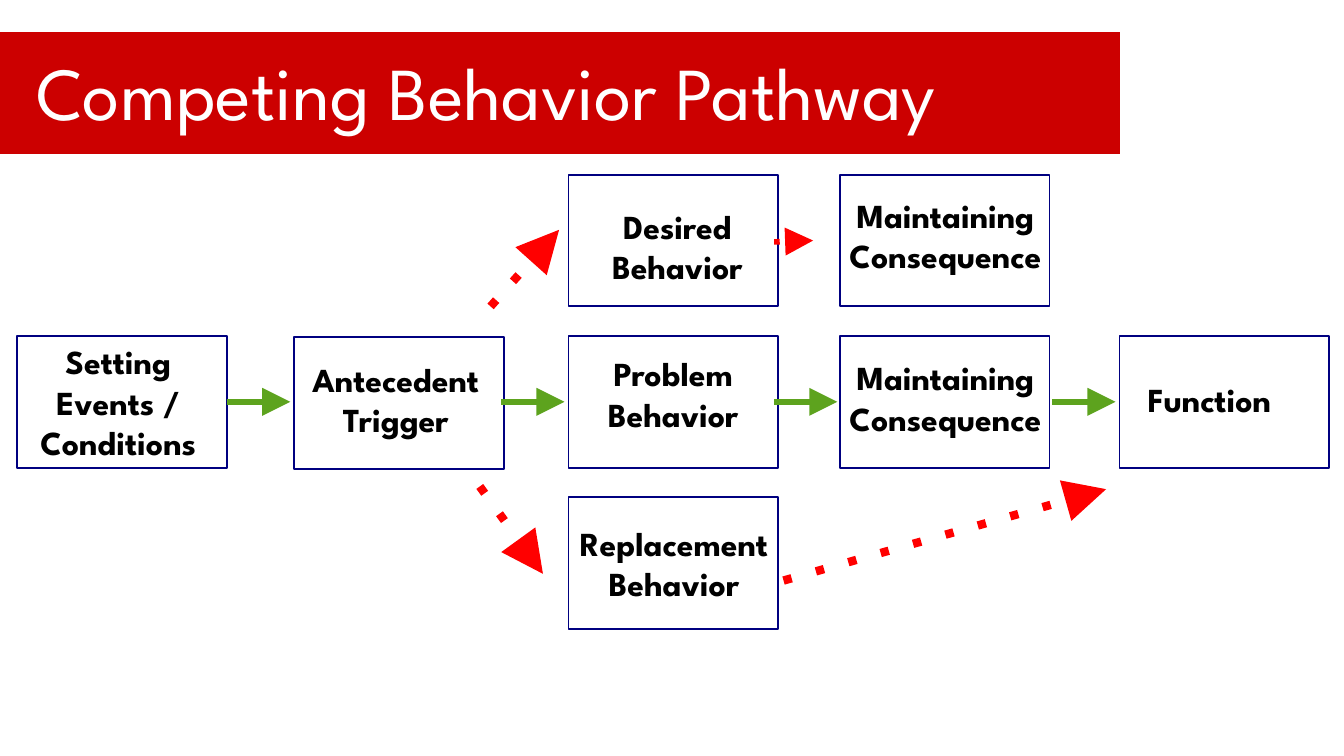
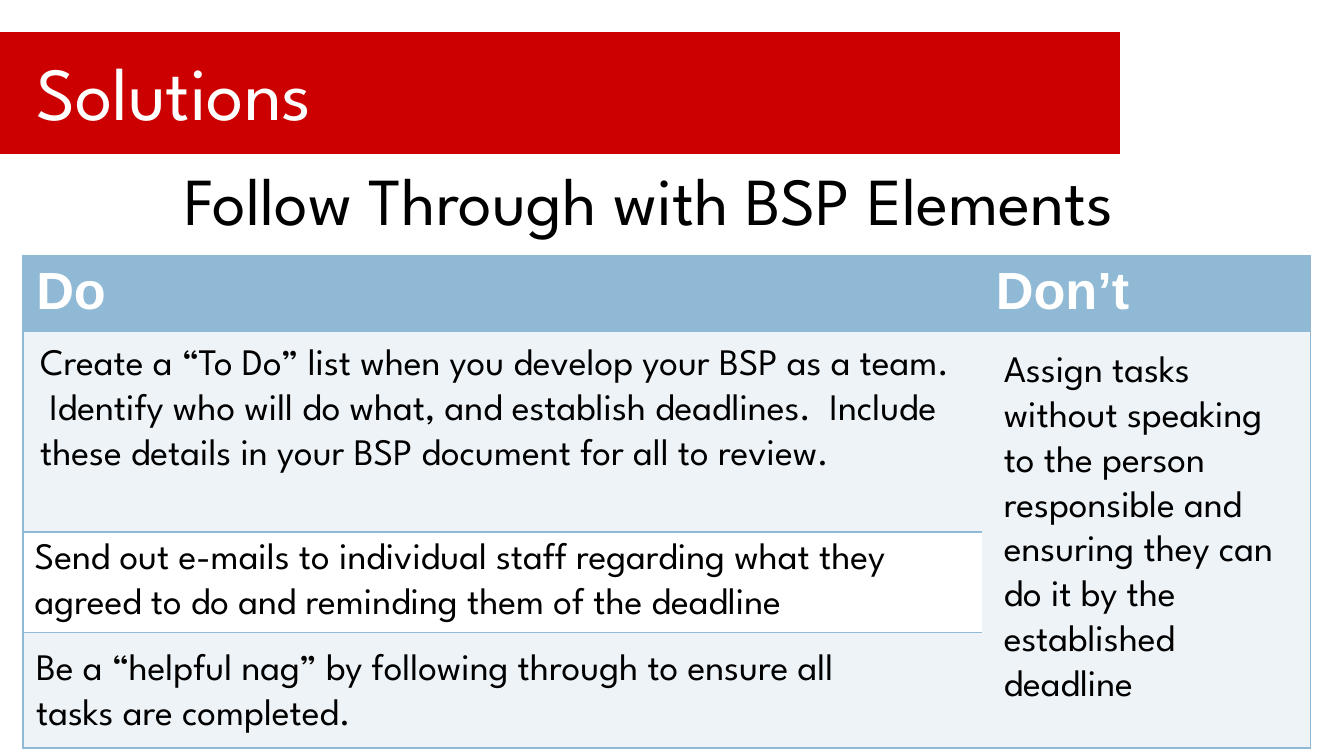
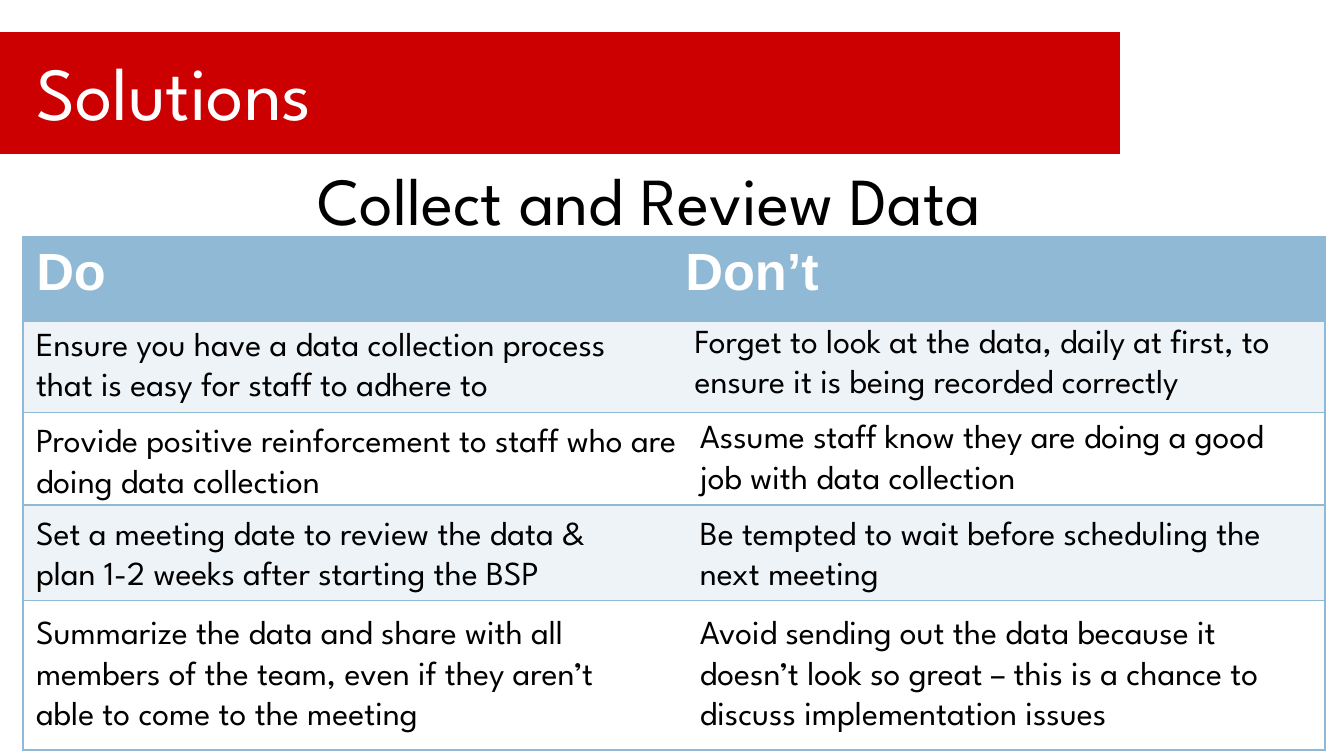
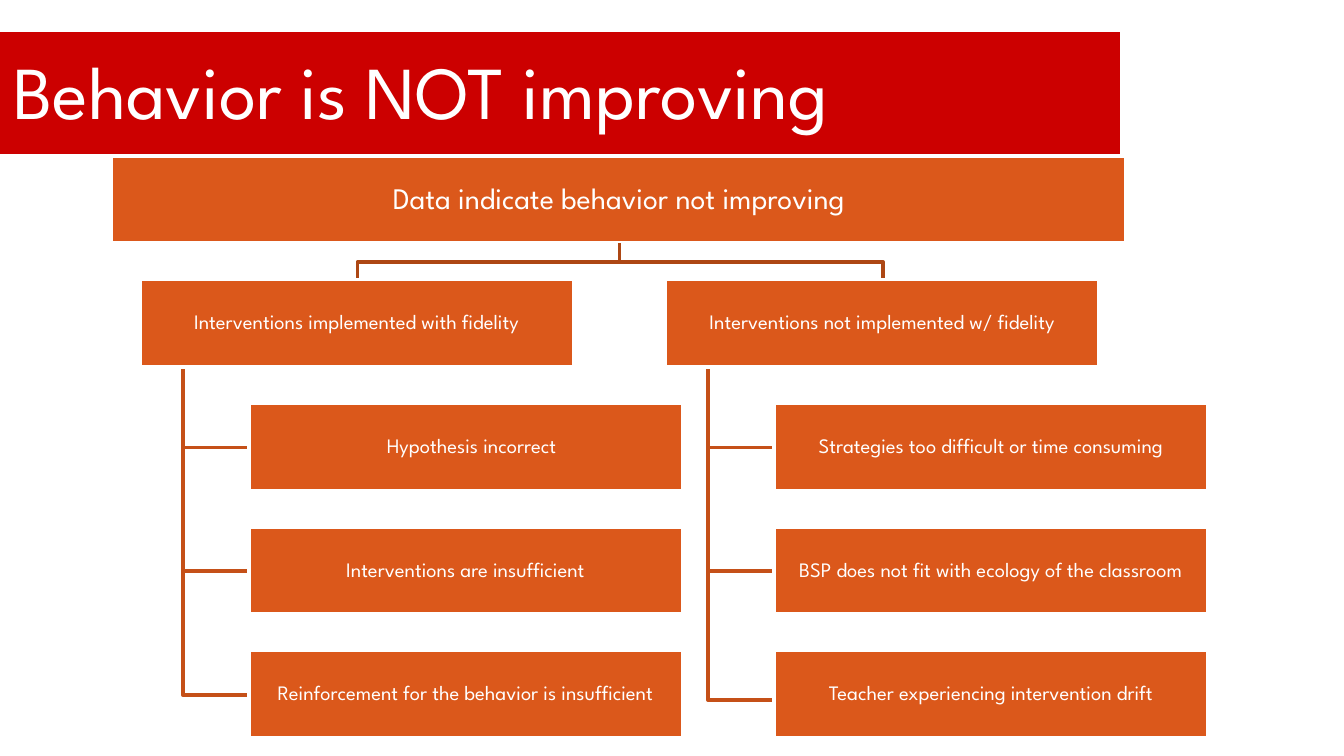
from lxml import etree
from pptx import Presentation
from pptx import util as u
from pptx.dml.color import RGBColor
from pptx.enum import shapes, text
from pptx.oxml.ns import qn

PX = 9144
FONT = "League Spartan"
WHITE, BLACK, RED = "FFFFFF", "000000", "CC0000"
NAVY, GREEN, BRIGHT_RED = "000080", "5DA31E", "FF0000"
BLUE, PALE = "8FB9D4", "EEF3F7"
ORANGE, ROOT_LINE, BRANCH_LINE = "DB581B", "AD4714", "C55018"
CENTER, LEFT = text.PP_ALIGN.CENTER, text.PP_ALIGN.LEFT
TOP, MIDDLE = text.MSO_ANCHOR.TOP, text.MSO_ANCHOR.MIDDLE


def px(*values):
    return [u.Emu(v * PX) for v in values]


def rgb(value):
    return RGBColor.from_string(value)


def write(tf, words, size=18, color=BLACK, bold=False, font=FONT, align=LEFT,
          anchor=TOP, ins=(10, 5, 10, 5), spacing=None):
    tf.word_wrap = True
    tf.vertical_anchor = anchor
    tf.margin_left, tf.margin_top, tf.margin_right, tf.margin_bottom = px(*ins)
    for i, line in enumerate(words.split("\n")):
        p = tf.add_paragraph() if i else tf.paragraphs[0]
        p.alignment = align
        p.line_spacing = spacing
        r = p.add_run()
        r.text = line
        r.font.size = u.Pt(size)
        r.font.name = font
        r.font.bold = bold
        r.font.color.rgb = rgb(color)


def add_text(s, box, words, **fmt):
    write(s.shapes.add_textbox(*px(*box)).text_frame, words, **fmt)


def add_rect(s, box, line, width, fill=None):
    sp = s.shapes.add_shape(shapes.MSO_SHAPE.RECTANGLE, *px(*box))
    sp.shadow.inherit = False
    if fill:
        sp.fill.solid()
        sp.fill.fore_color.rgb = rgb(fill)
    else:
        sp.fill.background()
    sp.line.color.rgb = rgb(line)
    sp.line.width = u.Pt(width)
    return sp


def add_arrow(s, ends, color, width, dotted=False, start=None):
    cx = s.shapes.add_connector(shapes.MSO_CONNECTOR.STRAIGHT, *px(*ends))
    if start is not None:
        cx.begin_connect(start, 3)
    cx.line.color.rgb = rgb(color)
    cx.line.width = u.Pt(width)
    spPr = cx.element.spPr
    ln = spPr.find(qn("a:ln"))
    if dotted:
        etree.SubElement(ln, qn("a:prstDash"), val="dot")
    etree.SubElement(ln, qn("a:tailEnd"), type="triangle", w="lg", len="lg")
    etree.SubElement(spPr, qn("a:effectLst"))


def add_elbow(s, points, color):
    fb = s.shapes.build_freeform(*points[0], scale=PX)
    fb.add_line_segments(points[1:], close=False)
    sp = fb.convert_to_shape()
    sp.shadow.inherit = False
    sp.fill.background()
    sp.line.color.rgb = rgb(color)
    sp.line.width = u.Pt(2.08)


def add_org_box(s, box, words, size=11, ins=(1, 1, 1, 1)):
    sp = add_rect(s, box, WHITE, 2.08, ORANGE)
    write(sp.text_frame, words, size=size, color=WHITE, align=CENTER,
          anchor=MIDDLE, ins=ins, spacing=0.9)


def set_borders(cell, sides):
    tcPr = cell._tc.get_or_add_tcPr()
    for side in "LRTB":
        ln = etree.SubElement(tcPr, qn("a:ln" + side), w=str(u.Pt(1)))
        if side in sides:
            fill = etree.SubElement(ln, qn("a:solidFill"))
            etree.SubElement(fill, qn("a:srgbClr"), val=BLUE)
        else:
            etree.SubElement(ln, qn("a:noFill"))


def add_do_dont_table(s, top, widths, heights, merge_dont=False):
    box = px(17, top, 328, 328)
    frame = s.shapes.add_table(len(heights), 2, *box)
    table = frame.table
    table.first_row = table.horz_banding = False
    for col, width in zip(table.columns, px(*widths)):
        col.width = width
    for row, height in zip(table.rows, px(*heights)):
        row.height = height
    frame.width, frame.height = box[2:]
    if merge_dont:
        table.cell(1, 1).merge(table.cell(len(heights) - 1, 1))
    for i in range(len(heights)):
        for j, sides in enumerate(("LTB", "RTB")):
            cell = table.cell(i, j)
            if cell.is_spanned:
                continue
            set_borders(cell, sides)
            cell.fill.solid()
            cell.fill.fore_color.rgb = rgb((PALE if i % 2 else WHITE) if i else BLUE)
    for j, heading in enumerate(("Do", "Don’t")):
        write(table.cell(0, j).text_frame, heading, size=28, color=WHITE,
              bold=True, font="Arial")


def new_slide(prs, title, box):
    s = prs.slides.add_slide(prs.slide_layouts[6])
    add_rect(s, (-8, 23, 842, 92), WHITE, 0.75, RED)
    add_text(s, box, title, size=40, color=WHITE, anchor=MIDDLE)
    return s


def solutions_slide(prs, subtitle):
    s = new_slide(prs, "Solutions", (17, 27, 947, 81))
    add_text(s, (0, 108, 950, 423), subtitle, size=36, align=CENTER,
             ins=(26, 10, 10, 10))
    return s


def pathway(prs):
    s = new_slide(prs, "Competing Behavior Pathway", (17, 27, 817, 81))
    steps = [
        ((13, 250), (13, 249, 150, 100), "Setting Events /\nConditions", CENTER),
        ((219, 251), (211, 262, 167, 77), "Antecedent Trigger", CENTER),
        ((423, 130), (425, 148, 158, 77), "Desired Behavior", CENTER),
        ((423, 250), (426, 258, 150, 77), "Problem Behavior", CENTER),
        ((423, 370), (414, 384, 175, 77), "Replacement Behavior", CENTER),
        ((625, 130), (612, 140, 183, 77), "Maintaining\nConsequence", CENTER),
        ((625, 250), (612, 261, 183, 77), "Maintaining\nConsequence", CENTER),
        ((833, 250), (844, 277, 133, 44), "Function", LEFT),
    ]
    rects = []
    for corner, label_box, label, align in steps:
        rects.append(add_rect(s, (*corner, 156, 98), NAVY, 1))
        add_text(s, label_box, label, bold=True, align=align)
    for x, start in ((169, rects[0]), (373, None), (576, None), (783, None)):
        add_arrow(s, (x, 299, x + 47, 299), GREEN, 3, start=start)
    for ends, width in (((365, 228, 416, 171), 4.5), ((583, 432, 823, 364), 4.5),
                        ((357, 362, 404, 427), 4.5), ((576, 180, 605, 179), 3)):
        add_arrow(s, ends, BRIGHT_RED, width, dotted=True)


def follow_through(prs):
    s = solutions_slide(prs, "Follow Through with BSP Elements")
    add_do_dont_table(s, 190, (714, 244), (52, 149, 75, 86), merge_dont=True)
    for box, words in (
        ((20, 247, 703, 145), "Create a “To Do” list when you develop your BSP as a team.  Identify who will do what, and establish deadlines.  Include these details in your BSP document for all to review."),
        ((737, 252, 231, 279), "Assign tasks without speaking to the person responsible and ensuring they can do it by the established deadline"),
        ((16, 391, 721, 77), "Send out e-mails to individual staff regarding what they agreed to do and reminding them of the deadline"),
        ((17, 474, 672, 77), "Be a “helpful nag” by following through to ensure all tasks are completed."),
    ):
        add_text(s, box, words, size=20)


def collect_data(prs):
    s = solutions_slide(prs, "Collect and Review Data")
    add_do_dont_table(s, 176, (483, 486), (63, 68, 69, 71, 111))
    for box, words in (
        ((17, 235, 474, 71), "Ensure you have a data collection process that is easy for staff to adhere to"),
        ((507, 233, 479, 71), "Forget to look at the data, daily at first, to ensure it is being recorded correctly"),
        ((17, 307, 507, 71), "Provide positive reinforcement to staff who are doing data collection"),
        ((511, 304, 472, 71), "Assume staff know they are doing a good job with data collection"),
        ((17, 376, 474, 71), "Set a meeting date to review the data & plan 1-2 weeks after starting the BSP"),
        ((511, 376, 479, 71), "Be tempted to wait before scheduling the next meeting"),
        ((17, 450, 456, 101), "Summarize the data and share with all members of the team, even if they aren’t able to come to the meeting"),
        ((511, 450, 479, 101), "Avoid sending out the data because it doesn’t look so great – this is a chance to discuss implementation issues"),
    ):
        add_text(s, box, words)


def not_improving(prs):
    s = new_slide(prs, "Behavior is NOT improving", (0, 26, 833, 81))
    branches = [
        (104, "Interventions implemented with fidelity", (333, 425, 517),
         ("Hypothesis incorrect", "Interventions are insufficient",
          "Reinforcement for the behavior is insufficient")),
        (495, "Interventions not implemented w/ fidelity", (333, 425, 521),
         ("Strategies too difficult or time consuming",
          "BSP does not fit with ecology of the classroom",
          "Teacher experiencing intervention drift")),
    ]
    add_org_box(s, (83, 116, 755, 65), "Data indicate behavior not improving", size=16)
    for x, heading, elbow_ends, causes in branches:
        add_elbow(s, [(461, 181), (461, 195), (x + 162, 195), (x + 162, 208)], ROOT_LINE)
        for y in elbow_ends:
            add_elbow(s, [(x + 32, 273), (x + 32, y), (x + 81, y)], BRANCH_LINE)
        add_org_box(s, (x, 208, 323, 65), heading)
        for i, cause in enumerate(causes):
            ins = (10, 1, 1, 1) if cause == "Hypothesis incorrect" else (1, 1, 1, 1)
            add_org_box(s, (x + 81, 300 + 92 * i, 323, 65), cause, ins=ins)


def main():
    prs = Presentation()
    prs.slide_width, prs.slide_height = u.Pt(720), u.Pt(405)
    pathway(prs)
    follow_through(prs)
    collect_data(prs)
    not_improving(prs)
    prs.save("out.pptx")


if __name__ == "__main__":
    main()
